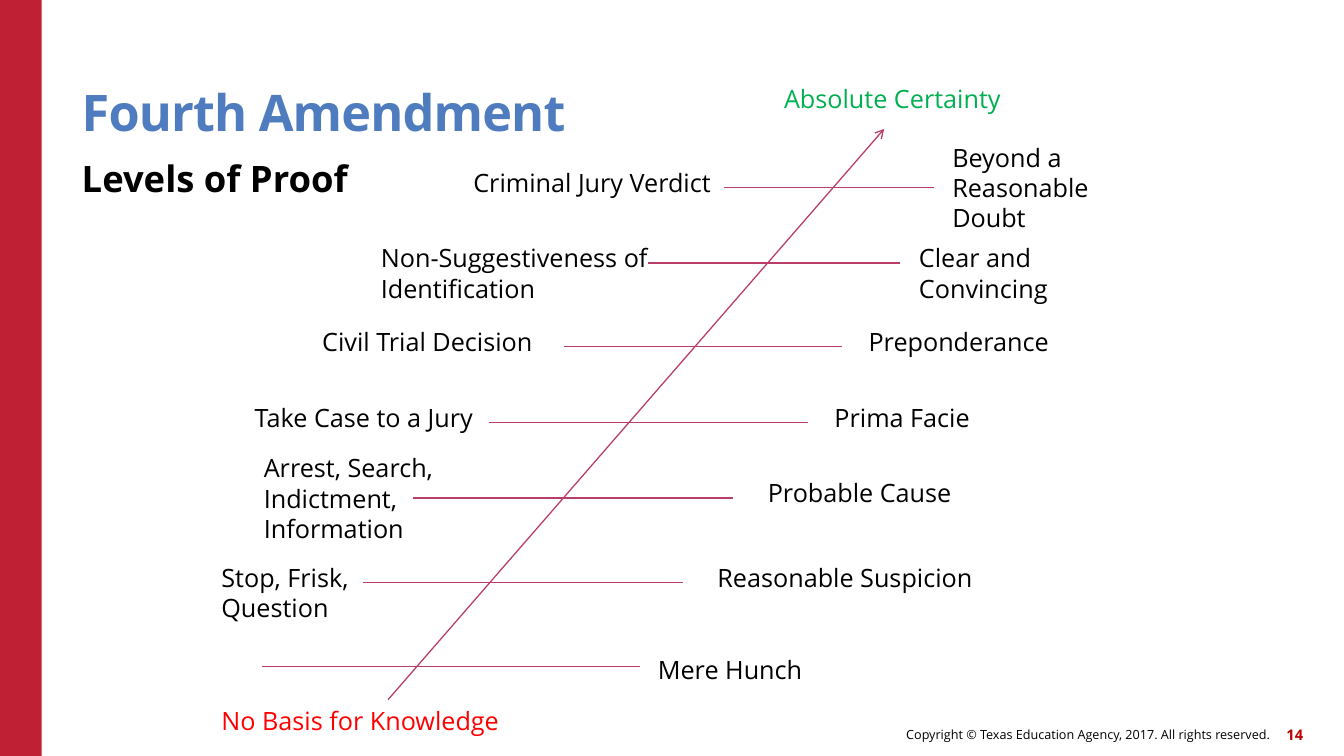
from lxml.etree import SubElement
from pptx import Presentation
from pptx.dml.color import RGBColor
from pptx.enum.shapes import MSO_CONNECTOR, MSO_SHAPE
from pptx.enum.text import MSO_ANCHOR, PP_ALIGN
from pptx.oxml.ns import qn
from pptx.util import Cm, Pt

COLORS = {
    "bar": "C02033",
    "title": "4E7CBE",
    "text": "000000",
    "line": "B83D68",
    "certain": "00B050",
    "unknown": "FF0000",
    "number": "C00000",
}
FONT = "Open Sans"
NO_MARGINS = {"margin_left": 0, "margin_top": 0, "margin_right": 0, "margin_bottom": 0}
LINE_HEIGHT = 0.77
LABEL_PADDING = 0.25

# line: y, start, end; labels: text, left, top, width, number of text lines
LEVELS = [
    ((2.74, 12.91, 18.22), ("Criminal Jury Verdict", 6.35, 2.11, 6.99, 1),
     ("Beyond a Reasonable Doubt", 18.42, 1.47, 4.01, 3)),
    ((4.65, 11, 17.35), ("Non-Suggestiveness of Identification", 4.02, 4.01, 9.96, 2),
     ("Clear and Convincing", 17.58, 4.01, 5.08, 2)),
    ((6.76, 8.89, 15.88), ("Civil Trial Decision", 2.54, 6.12, 6.78, 1),
     ("Preponderance", 16.31, 6.12, 5.51, 1)),
    ((8.66, 6.99, 15.04), ("Take Case to a Jury", 0.84, 8.03, 6.35, 1),
     ("Prima Facie", 15.45, 8.03, 6.99, 1)),
    ((10.57, 5.08, 13.14), ("Arrest, Search, Indictment, Information", 1.07, 9.3, 6.15, 3),
     ("Probable Cause", 13.77, 9.93, 6.15, 1)),
    ((12.69, 3.81, 11.87), ("Stop, Frisk, Question", 0, 12.07, 4.65, 2),
     ("Reasonable Suspicion", 12.5, 12.07, 7.82, 1)),
    ((14.81, 1.27, 10.8), ("Mere Hunch", 11, 14.38, 8.26, 1)),
]


def apply_format(target, values):
    """Set every attribute named in a dict of format values."""
    for name, value in values.items():
        setattr(target, name, value)


def write_text(shape, text, size, color, bold=False, frame=None, paragraph_format=None):
    """Fill a shape with one formatted paragraph and return its run."""
    apply_format(shape.text_frame, {"word_wrap": True, **(frame or {})})
    paragraph = shape.text_frame.paragraphs[0]
    apply_format(paragraph, paragraph_format or {})
    run = paragraph.add_run()
    run.text = text
    apply_format(run.font, {"name": FONT, "size": Pt(size), "bold": bold})
    run.font.color.rgb = RGBColor.from_string(COLORS[color])
    return run


def place(shape, box):
    """Move a shape to a box given in centimetres."""
    apply_format(shape, dict(zip(("left", "top", "width", "height"), map(Cm, box))))


def add_text(slide, box, *content, **formats):
    """Add a text box with one paragraph."""
    write_text(slide.shapes.add_textbox(*map(Cm, box)), *content, **formats)


def add_line(slide, start, end, arrow=False):
    """Draw a thin line between two points, with an optional arrowhead."""
    connector = slide.shapes.add_connector(MSO_CONNECTOR.STRAIGHT, *map(Cm, (*start, *end)))
    connector.line.color.rgb = RGBColor.from_string(COLORS["line"])
    connector.line.width = Pt(0.9)
    properties = connector.line._get_or_add_ln()
    if arrow:
        SubElement(properties, qn("a:tailEnd"), type="arrow")
    SubElement(properties.getparent(), qn("a:effectLst"))


def add_side_bar(slide, box):
    """Draw the coloured bar along the slide edge."""
    bar = slide.shapes.add_shape(MSO_SHAPE.RECTANGLE, *map(Cm, box))
    bar.shadow.inherit = False
    bar.fill.solid()
    bar.fill.fore_color.rgb = RGBColor.from_string(COLORS["bar"])
    bar.line.fill.background()


def add_heading(slide, box):
    """Fill the title and body placeholders."""
    left, top, width, height = box
    title, body = slide.placeholders
    place(title, (left, top, width, 2.44))
    run = write_text(title, "Fourth Amendment", 36, "title", True,
                     {**NO_MARGINS, "vertical_anchor": MSO_ANCHOR.BOTTOM},
                     {"alignment": PP_ALIGN.LEFT, "line_spacing": 0.9})
    run.font._element.set("spc", "-60")
    place(body, (left, top + 2.8, 14.88, height - 2.8))
    properties = body.text_frame.paragraphs[0]._p.get_or_add_pPr()
    properties.set("marL", "0")
    properties.set("indent", "0")
    SubElement(properties, qn("a:buNone"))
    write_text(body, "Levels of Proof", 26, "text", True,
               {**NO_MARGINS, "vertical_anchor": MSO_ANCHOR.TOP}, {"space_before": Pt(0)})


def add_ladder(slide, box):
    """Draw the rising arrow with its levels of proof."""
    left, top, width, height = box

    def add_label(text, x, y, label_width, lines, color="text"):
        """Place one label inside the ladder."""
        label_height = lines * LINE_HEIGHT + LABEL_PADDING
        add_text(slide, (left + x, top + y, label_width, label_height), text, 18, color)

    add_line(slide, (left + 4.45, top + height - 1.04), (left + 16.95, top + 1.27), True)
    add_label("Absolute Certainty", 14.18, 0, 7.19, 1, "certain")
    for (y, start, end), *labels in LEVELS:
        add_line(slide, (left + start, top + y), (left + end, top + y))
        for label in labels:
            add_label(*label)
    add_label("No Basis for Knowledge", 0, height - 1.02, 11, 1, "unknown")


def add_footer(slide, box):
    """Write the copyright line and the page number."""
    left, top, width, height = box
    formats = {"frame": {**NO_MARGINS, "vertical_anchor": MSO_ANCHOR.MIDDLE},
               "paragraph_format": {"alignment": PP_ALIGN.RIGHT}}
    add_text(slide, (left, top, 16.4, height),
             "Copyright © Texas Education Agency, 2017. All rights reserved.",
             9, "text", **formats)
    add_text(slide, (left + width - 1.07, top, 1.07, height), "14", 10.5, "number", True, **formats)


def main():
    """Build and save the slide."""
    presentation = Presentation()
    apply_format(presentation, {"slide_width": Cm(33.87), "slide_height": Cm(19.05)})
    slide = presentation.slides.add_slide(presentation.slide_layouts[1])
    add_side_bar(slide, (0, 0, 1.05, 19.05))
    add_heading(slide, (2.06, 1.14, 27.94, 15.95))
    add_ladder(slide, (5.33, 1.98, 22.66, 16.69))
    add_footer(slide, (15.6, 18.1, 17.24, 0.81))
    presentation.save("out.pptx")


if __name__ == "__main__":
    main()
